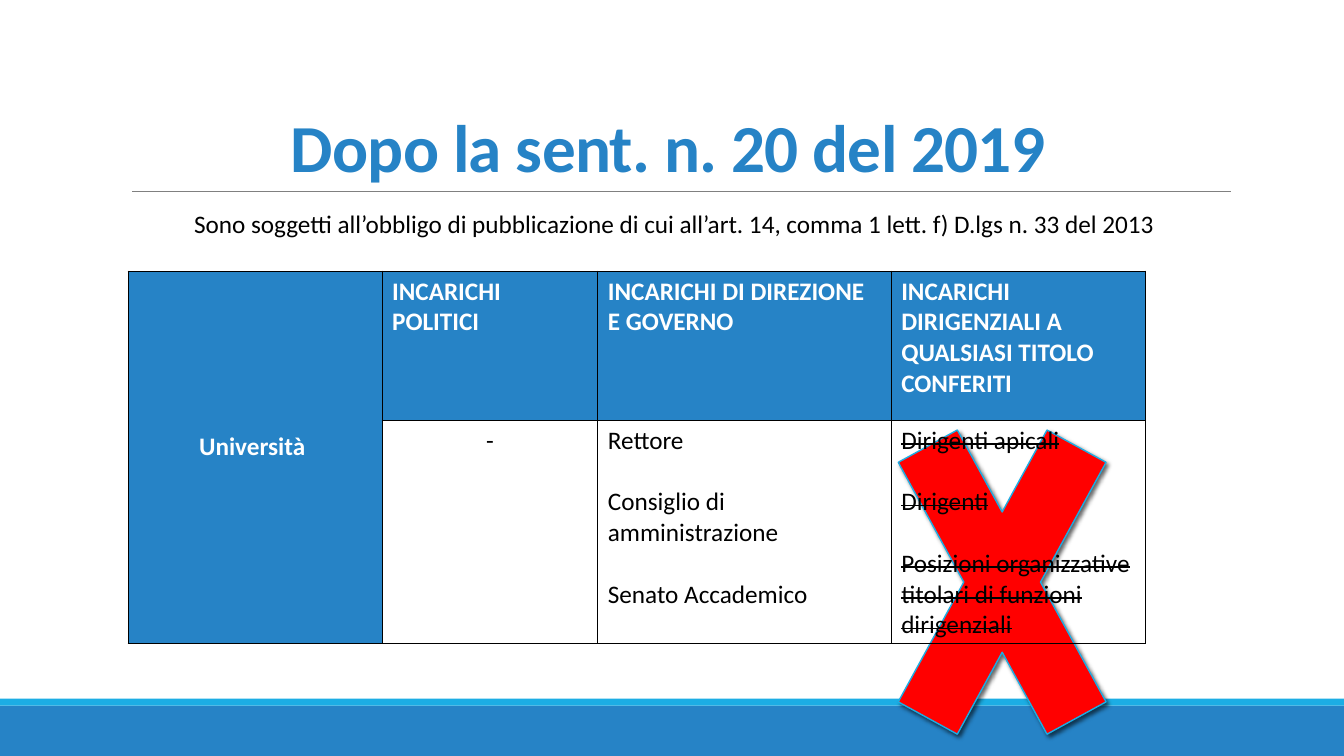
from dataclasses import dataclass
from lxml.etree import SubElement
from pptx import Presentation
from pptx.dml.color import RGBColor
from pptx.enum.shapes import MSO_CONNECTOR, MSO_SHAPE
from pptx.enum.text import MSO_ANCHOR, PP_ALIGN
from pptx.oxml.ns import qn
from pptx.util import Inches, Pt

BLUE = RGBColor(0x26, 0x83, 0xC6)
CYAN = RGBColor(0x1C, 0xAD, 0xE4)
GRAY = RGBColor(0x80, 0x80, 0x80)
RED = RGBColor(0xFF, 0x00, 0x00)
BLACK = RGBColor(0x00, 0x00, 0x00)
WHITE = RGBColor(0xFF, 0xFF, 0xFF)
WIDTH, HEIGHT = Inches(13.33), Inches(7.5)
FONT = "Calibri"
BODY = 18
GAP = 22


def across(share: float) -> int:
    return round(WIDTH * share / 100)


def down(share: float) -> int:
    return round(HEIGHT * share / 100)


@dataclass
class Box:
    left: float
    top: float
    width: float
    height: float

    def place(self) -> tuple[int, int, int, int]:
        return across(self.left), down(self.top), across(self.width), down(self.height)


@dataclass
class Style:
    color: RGBColor = BLACK
    size: float = BODY
    bold: bool = False
    align: PP_ALIGN = PP_ALIGN.LEFT
    strike: bool = False


@dataclass
class Band:
    box: Box
    color: RGBColor


@dataclass
class Entry:
    row: int
    col: int
    text: str
    style: Style


HEAD = Style(WHITE, bold=True)
SIDE = Style(WHITE, bold=True, align=PP_ALIGN.CENTER)
BANDS = [
    Band(Box(0, 93.33, 100, 6.67), BLUE),
    Band(Box(0, 92.4, 100, 0.93), CYAN),
]
GRID = Box(9.53, 35.87, 75.68, 49.03)
COLS = [18.9, 16.05, 21.83, 18.9]
ROWS = [19.73, 29.3]
ENTRIES = [
    Entry(0, 0, "Università ", SIDE),
    Entry(0, 1, "INCARICHI POLITICI", HEAD),
    Entry(0, 2, "INCARICHI DI DIREZIONE E GOVERNO", HEAD),
    Entry(0, 3, "INCARICHI DIRIGENZIALI A QUALSIASI TITOLO CONFERITI", HEAD),
    Entry(1, 1, "-", Style(align=PP_ALIGN.CENTER)),
    Entry(1, 2, "Rettore\nConsiglio di amministrazione\nSenato Accademico", Style()),
    Entry(
        1,
        3,
        "Dirigenti apicali\nDirigenti\n"
        "Posizioni organizzative titolari di funzioni dirigenziali",
        Style(strike=True),
    ),
]


def write(frame, text: str, style: Style) -> None:
    frame.text = text
    for index, para in enumerate(frame.paragraphs):
        para.alignment = style.align
        para.space_before = Pt(GAP if index else 0)
        for run in para.runs:
            font = run.font
            font.name, font.size, font.bold = FONT, Pt(style.size), style.bold
            font.color.rgb = style.color
            if style.strike:
                run._r.get_or_add_rPr().set("strike", "sngStrike")


def label(slide, box: Box, text: str, style: Style):
    frame = slide.shapes.add_textbox(*box.place()).text_frame
    frame.word_wrap = True
    write(frame, text, style)
    return frame


def solid(slide, kind: MSO_SHAPE, box: Box, color: RGBColor):
    shape = slide.shapes.add_shape(kind, *box.place())
    shape.shadow.inherit = False
    shape.fill.solid()
    shape.fill.fore_color.rgb = color
    shape.line.fill.background()
    return shape


def rule(slide, left: float, right: float, top: float) -> None:
    line = slide.shapes.add_connector(
        MSO_CONNECTOR.STRAIGHT, across(left), down(top), across(right), down(top)
    )
    line.line.color.rgb = GRAY
    line.line.width = Pt(0.5)
    SubElement(line._element.spPr, qn("a:effectLst"))


def title(slide) -> None:
    style = Style(BLUE, 48, True, PP_ALIGN.CENTER)
    frame = label(slide, Box(9, 4.13, 82.5, 21.2), "Dopo la sent. n. 20 del 2019 ", style)
    frame.vertical_anchor = MSO_ANCHOR.BOTTOM
    para = frame.paragraphs[0]
    para.line_spacing = 0.85
    para.runs[0]._r.get_or_add_rPr().set("spc", "-50")


def cross(slide) -> None:
    shape = solid(slide, MSO_SHAPE.MATH_MULTIPLY, Box(63.92, 42.4, 21.3, 69.2), RED)
    shape.line.color.rgb = CYAN
    shape.line.width = Pt(1)
    effect = shape._element.spPr.find(qn("a:effectLst"))
    shade = SubElement(
        effect, qn("a:outerShdw"), blurRad=str(Pt(3)), dist=str(Pt(2)),
        dir=str(45 * 60000), rotWithShape="0",
    )
    color = SubElement(shade, qn("a:srgbClr"), val=str(BLACK))
    SubElement(color, qn("a:alpha"), val="60000")


def frame_cell(cell) -> None:
    props = cell._tc.get_or_add_tcPr()
    for side in ("lnL", "lnR", "lnT", "lnB"):
        line = SubElement(props, qn(f"a:{side}"), w=str(Pt(1)))
        fill = SubElement(line, qn("a:solidFill"))
        SubElement(fill, qn("a:srgbClr"), val=str(BLACK))


def table(slide) -> None:
    grid = slide.shapes.add_table(len(ROWS), len(COLS), *GRID.place()).table
    for col, share in zip(grid.columns, COLS):
        col.width = across(share)
    for row, share in zip(grid.rows, ROWS):
        row.height = down(share)
    for row in range(len(ROWS)):
        for col in range(len(COLS)):
            cell = grid.cell(row, col)
            frame_cell(cell)
            if row == 0 or col == 0:
                cell.fill.solid()
                cell.fill.fore_color.rgb = BLUE
            else:
                cell.fill.background()
    side = grid.cell(0, 0)
    side.merge(grid.cell(1, 0))
    side.vertical_anchor = MSO_ANCHOR.MIDDLE
    side.margin_bottom = Inches(0.25)
    for entry in ENTRIES:
        write(grid.cell(entry.row, entry.col).text_frame, entry.text, entry.style)


def main() -> None:
    deck = Presentation()
    deck.slide_width, deck.slide_height = WIDTH, HEIGHT
    slide = deck.slides.add_slide(deck.slide_layouts[6])
    for band in BANDS:
        solid(slide, MSO_SHAPE.RECTANGLE, band.box, band.color)
    rule(slide, 9.83, 91.6, 25.33)
    title(slide)
    label(
        slide,
        Box(13.28, 26.93, 73.89, 9.47),
        " Sono soggetti all’obbligo di pubblicazione di cui all’art. 14, "
        "comma 1 lett. f) D.lgs n. 33 del 2013",
        Style(),
    )
    cross(slide)
    table(slide)
    deck.save("out.pptx")


if __name__ == "__main__":
    main()
